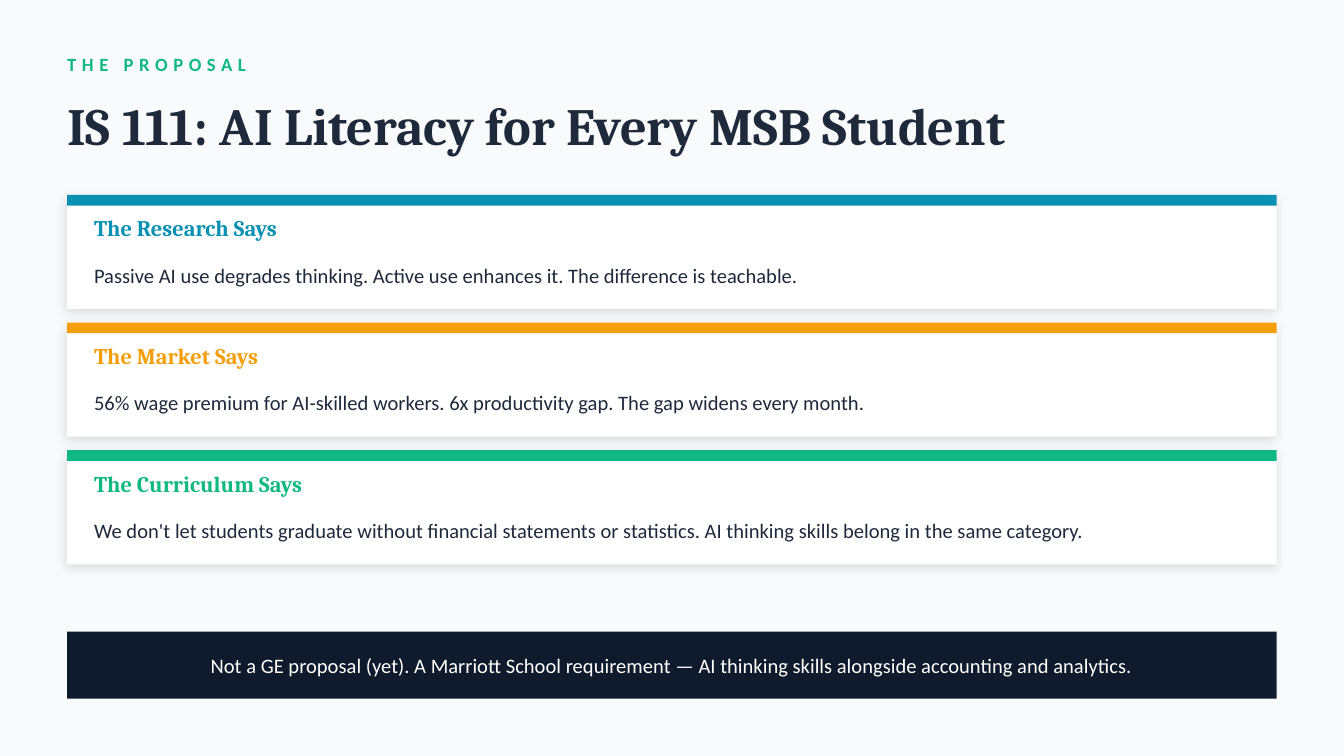
import pptx
import pptx.dml.color
import pptx.enum.shapes
import pptx.enum.text
import pptx.oxml
import pptx.oxml.ns
import pptx.util

Inches = pptx.util.Inches
PP_ALIGN = pptx.enum.text.PP_ALIGN

COLORS = {
    "background": "F8FAFC",
    "ink": "1E293B",
    "navy": "0F1B2D",
    "white": "FFFFFF",
    "teal": "0891B2",
    "amber": "F59E0B",
    "green": "10B981",
}
HEADING, BODY = "Cambria", "Calibri"

CARDS = [
    ("The Research Says", "teal",
     "Passive AI use degrades thinking. Active use enhances it. The difference is teachable."),
    ("The Market Says", "amber",
     "56% wage premium for AI-skilled workers. 6x productivity gap. The gap widens every month."),
    ("The Curriculum Says", "green",
     "We don't let students graduate without financial statements or statistics. "
     "AI thinking skills belong in the same category."),
]


def rgb(name):
    return pptx.dml.color.RGBColor.from_string(COLORS[name])


def format_text(sp, text, size, color, font=BODY, bold=False, align=PP_ALIGN.LEFT):
    """Fill a shape with one line of text, without insets and centred vertically."""
    tf = sp.text_frame
    tf.text = text
    tf.word_wrap = True
    tf.auto_size = pptx.enum.text.MSO_AUTO_SIZE.NONE
    tf.vertical_anchor = pptx.enum.text.MSO_ANCHOR.MIDDLE
    tf.margin_left = tf.margin_right = tf.margin_top = tf.margin_bottom = 0
    p = tf.paragraphs[0]
    p.alignment = align
    r = p.runs[0]
    r.font.name = font
    r.font.size = pptx.util.Pt(size)
    r.font.bold = bold
    r.font.color.rgb = rgb(color)
    return r


def add_text(s, x, y, w, h, *args, **kwargs):
    sp = s.shapes.add_textbox(Inches(x), Inches(y), Inches(w), Inches(h))
    return format_text(sp, *args, **kwargs)


def add_rect(s, x, y, w, h, color):
    sp = s.shapes.add_shape(pptx.enum.shapes.MSO_SHAPE.RECTANGLE,
                            Inches(x), Inches(y), Inches(w), Inches(h))
    sp.shadow.inherit = False
    sp.fill.solid()
    sp.fill.fore_color.rgb = rgb(color)
    sp.line.fill.background()
    return sp


def add_soft_shadow(sp):
    effects = sp._element.spPr.find(pptx.oxml.ns.qn("a:effectLst"))
    effects.append(pptx.oxml.parse_xml(
        f'<a:outerShdw {pptx.oxml.ns.nsdecls("a")} blurRad="{pptx.util.Pt(6)}" '
        f'dist="{pptx.util.Pt(2)}" dir="{135 * 60000}" algn="bl" rotWithShape="0">'
        '<a:srgbClr val="000000"><a:alpha val="12000"/></a:srgbClr></a:outerShdw>'))


def add_header(s, x, y, w):
    r = add_text(s, x, y, 3, 0.35, "THE PROPOSAL", 10, "green", bold=True)
    r._r.get_or_add_rPr().set("spc", "300")
    title = s.shapes.title
    title.left, title.top = Inches(x), Inches(y + 0.35)
    title.width, title.height = Inches(w), Inches(0.55)
    format_text(title, "IS 111: AI Literacy for Every MSB Student", 28, "ink", HEADING, True)


def add_card(s, x, y, w, h, heading, color, body):
    add_soft_shadow(add_rect(s, x, y, w, h, "white"))
    add_rect(s, x, y, w, 0.08, color)
    add_text(s, x + 0.2, y + 0.12, 2.5, 0.25, heading, 12, color, HEADING, True)
    add_text(s, x + 0.2, y + 0.42, w - 0.7, 0.35, body, 11, "ink")


def add_banner(s, x, y, w, h):
    add_rect(s, x, y, w, h, "navy")
    add_text(s, x + 0.2, y, w - 0.4, h,
             "Not a GE proposal (yet). A Marriott School requirement — "
             "AI thinking skills alongside accounting and analytics.",
             11, "white", align=PP_ALIGN.CENTER)


def main():
    prs = pptx.Presentation()
    prs.slide_width = Inches(10)
    prs.slide_height = Inches(10 * 9 / 16)
    s = prs.slides.add_slide(prs.slide_layouts[5])
    s.background.fill.solid()
    s.background.fill.fore_color.rgb = rgb("background")

    left, width = 0.5, 9
    card_height, gap = 0.85, 0.1
    add_header(s, left, 0.3, width)
    for i, card in enumerate(CARDS):
        add_card(s, left, 1.45 + i * (card_height + gap), width, card_height, *card)
    add_banner(s, left, 4.7, width, 0.5)
    prs.save("out.pptx")


if __name__ == "__main__":
    main()
